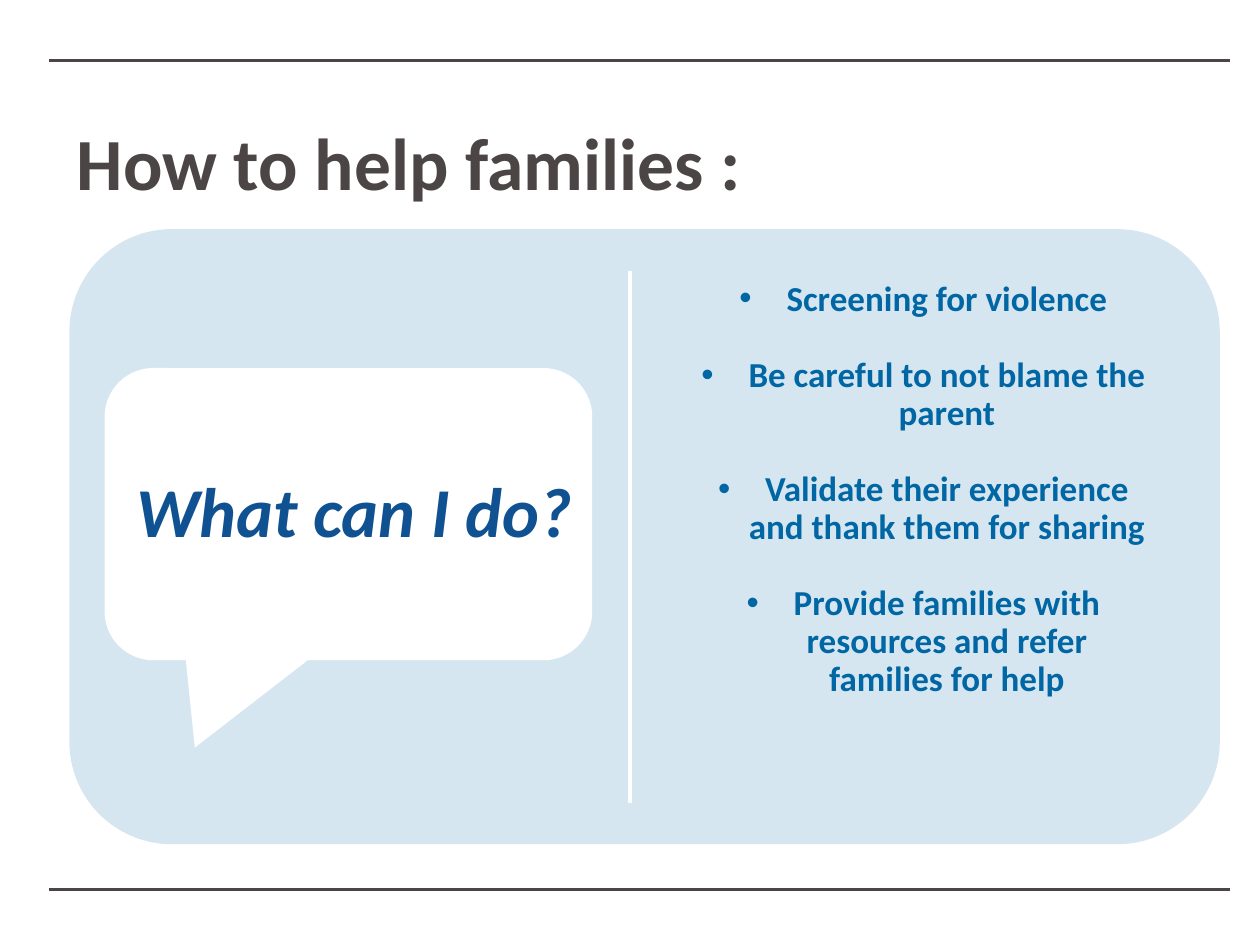
import pptx
import pptx.dml.color
import pptx.enum.dml
import pptx.enum.shapes
import pptx.enum.text
import pptx.oxml
import pptx.oxml.ns
import pptx.util
from lxml import etree

Cm = pptx.util.Cm
Pt = pptx.util.Pt
SHAPES = pptx.enum.shapes.MSO_SHAPE
ALIGN = pptx.enum.text.PP_ALIGN
ANCHOR = pptx.enum.text.MSO_ANCHOR
FIT = pptx.enum.text.MSO_AUTO_SIZE

TITLE = "How to help families :"
QUESTION = "What can I do?"
ACTIONS = [
    "Screening for violence",
    "Be careful to not blame the parent",
    "Validate their experience and thank them for sharing",
    "Provide families with resources and refer families for help",
]

THEME = {
    "font": "Calibri",
    "ink": "4C4545",
    "blue": "0066A4",
    "navy": "105291",
    "white": "FFFFFF",
    "panel_opacity": 16,
    "title_size": 42,
    "question_size": 40,
    "action_size": 20,
    "line_width": 2,
}

PANEL = (1.4, 4.62, 23.19, 12.4)
CALLOUT = (2.11, 7.42, 9.83, 5.89)
CALLOUT_ADJUSTMENTS = (-0.315, 0.799, 0.167)
TITLE_BOX = (1.3, 1.83, 24.71, 3.18)
QUESTION_BOX = (2.49, 9.5, 9.3, 1.8)
ACTION_BOX = (13.84, 5.54, 9.55, 8.71)
RULE_LEFT, RULE_RIGHT = 0.99, 24.79
RULE_HEIGHTS = (1.22, 17.93)
DIVIDER = (12.7, 5.46, 12.7, 16.18)
BULLET_INDENT = 0.95


def color(name):
    return pptx.dml.color.RGBColor.from_string(THEME[name])


def apply_format(target, values):
    for name, value in values.items():
        setattr(target, name, value)


def add_filled_shape(slide, kind, box, fill):
    shape = slide.shapes.add_shape(kind, *map(Cm, box))
    shape.shadow.inherit = False
    shape.fill.solid()
    shape.fill.fore_color.rgb = color(fill)
    shape.line.fill.background()
    return shape


def add_line(slide, ends, line_color):
    connector = slide.shapes.add_connector(
        pptx.enum.shapes.MSO_CONNECTOR.STRAIGHT, *map(Cm, ends))
    connector.line.color.rgb = color(line_color)
    connector.line.width = Pt(THEME["line_width"])
    etree.SubElement(connector._element.spPr, pptx.oxml.ns.qn("a:effectLst"))


def add_bullet(paragraph):
    properties = paragraph._p.get_or_add_pPr()
    properties.set("marL", str(Cm(BULLET_INDENT)))
    properties.set("indent", str(-Cm(BULLET_INDENT)))
    font = etree.SubElement(properties, pptx.oxml.ns.qn("a:buFont"))
    font.set("typeface", "Arial")
    bullet = etree.SubElement(properties, pptx.oxml.ns.qn("a:buChar"))
    bullet.set("char", "•")


def add_text(slide, box, texts, frame_format, paragraph_format, font_format,
             text_color, bulleted=False, gap=0):
    frame = slide.shapes.add_textbox(*map(Cm, box)).text_frame
    apply_format(frame, {"word_wrap": True, **frame_format})
    for index, text in enumerate(texts):
        paragraph = frame.add_paragraph() if index else frame.paragraphs[0]
        if bulleted:
            add_bullet(paragraph)
        apply_format(paragraph, paragraph_format)
        if index and gap:
            paragraph.space_before = Pt(gap)
        run = paragraph.add_run()
        run.text = text
        apply_format(run.font, {"name": THEME["font"], "bold": True, **font_format})
        run.font.color.rgb = color(text_color)


def main():
    presentation = pptx.Presentation()
    presentation.slide_width, presentation.slide_height = Cm(25.4), Cm(19.05)
    slide = presentation.slides.add_slide(presentation.slide_layouts[6])

    panel = add_filled_shape(slide, SHAPES.ROUNDED_RECTANGLE, PANEL, "blue")
    panel_color = panel._element.spPr.find(".//" + pptx.oxml.ns.qn("a:srgbClr"))
    alpha = etree.SubElement(panel_color, pptx.oxml.ns.qn("a:alpha"))
    alpha.set("val", str(THEME["panel_opacity"] * 1000))

    for height in RULE_HEIGHTS:
        add_line(slide, (RULE_LEFT, height, RULE_RIGHT, height), "ink")
    add_text(slide, TITLE_BOX, [TITLE], {"vertical_anchor": ANCHOR.MIDDLE},
             {"line_spacing": 0.8}, {"size": Pt(THEME["title_size"])}, "ink")
    add_line(slide, DIVIDER, "white")

    callout = add_filled_shape(
        slide, SHAPES.ROUNDED_RECTANGULAR_CALLOUT, CALLOUT, "white")
    for index, value in enumerate(CALLOUT_ADJUSTMENTS):
        callout.adjustments[index] = value

    growing = {"auto_size": FIT.SHAPE_TO_FIT_TEXT}
    centered = {"alignment": ALIGN.CENTER, "line_spacing": 0.9}
    add_text(slide, QUESTION_BOX, [QUESTION], growing,
             {**centered, "space_after": Pt(9)},
             {"size": Pt(THEME["question_size"]), "italic": True}, "navy")
    add_text(slide, ACTION_BOX, ACTIONS, growing, centered,
             {"size": Pt(THEME["action_size"])}, "blue", bulleted=True, gap=22)

    presentation.save("out.pptx")


if __name__ == "__main__":
    main()
